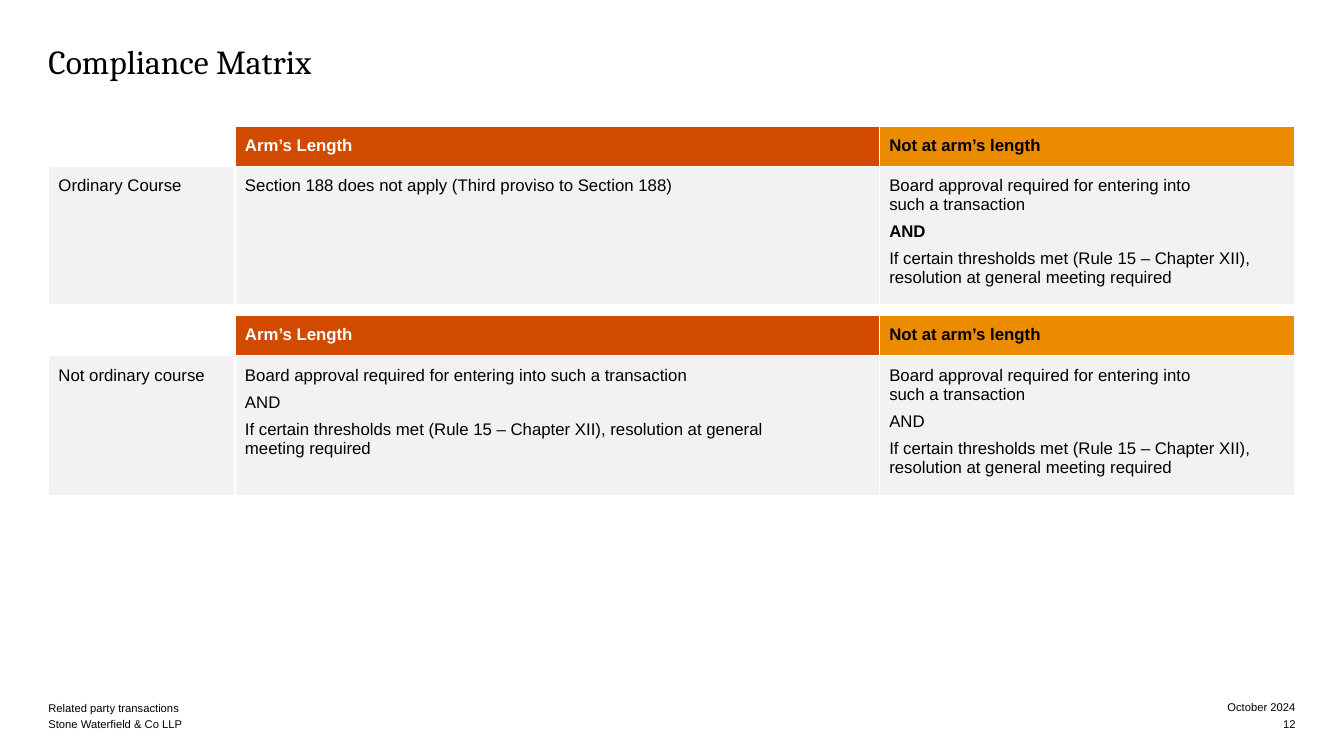
"""Builds a compliance matrix slide for related party transactions."""
from lxml.etree import SubElement
from pptx import Presentation
from pptx.dml.color import RGBColor as RGB
from pptx.enum.text import MSO_ANCHOR as ANCHOR, PP_ALIGN as ALIGN
from pptx.oxml.ns import qn
from pptx.util import Inches, Pt

COLORS = {"black": "000000", "white": "FFFFFF", "red": "D04A02",
          "amber": "EB8C00", "grey": "F2F2F2"}
LEFT, HEAD_H = 0.48, 0.4
COLS = (1.85, 6.39, 4.12)
HEADERS = ("", "Arm’s Length", "Not at arm’s length")
BOARD = "Board approval required for entering into "
RULE = "If certain thresholds met (Rule 15 – Chapter XII), resolution at general "
BOARD_SPLIT = BOARD + "\vsuch a transaction"
RULE_WRAP = RULE + "meeting required"


def write(tf, text, font="Arial", size=12, color="black", bold=False,
          bold_lines=(), align=ALIGN.LEFT, spacing=None, after=0):
    tf.word_wrap = True
    for i, line in enumerate(text.split("\n")):
        p = tf.paragraphs[0] if i == 0 else tf.add_paragraph()
        p.text = line
        p.alignment, p.line_spacing, p.space_after = align, spacing, Pt(after)
        for r in p.runs:
            r.font.name, r.font.size = font, Pt(size)
            r.font.bold = bold or line in bold_lines
            r.font.color.rgb = RGB.from_string(COLORS[color])


class Deck:
    def __init__(self):
        self.prs = Presentation()
        self.prs.slide_width, self.prs.slide_height = Inches(13.33), Inches(7.5)
        self.s = self.prs.slides.add_slide(self.prs.slide_layouts[6])

    def text(self, text, x, y, w, h, anchor=ANCHOR.TOP, **fmt):
        sp = self.s.shapes.add_textbox(Inches(x), Inches(y), Inches(w), Inches(h))
        tf = sp.text_frame
        tf.margin_left = tf.margin_right = tf.margin_top = tf.margin_bottom = 0
        tf.vertical_anchor = anchor
        write(tf, text, **fmt)

    def border(self, cell, side):
        ln = SubElement(cell._tc.get_or_add_tcPr(), qn(f"a:ln{side}"), w=str(Pt(1)))
        fill = SubElement(ln, qn("a:solidFill"))
        SubElement(fill, qn("a:srgbClr"), val=COLORS["white"])

    def cell(self, cell, text, fill, sides, **fmt):
        for side in sides:
            self.border(cell, side)
        if not text:
            cell.fill.background()
            return
        cell.fill.solid()
        cell.fill.fore_color.rgb = RGB.from_string(COLORS[fill])
        cell.margin_left = cell.margin_right = Inches(0.1)
        cell.margin_top = cell.margin_bottom = Inches(0.1)
        write(cell.text_frame, text, after=6, **fmt)

    def matrix(self, y, body_h, body, bold_lines=()):
        heights = (HEAD_H, body_h)
        table = self.s.shapes.add_table(
            2, len(COLS), Inches(LEFT), Inches(y),
            Inches(sum(COLS)), Inches(sum(heights))).table
        table.first_row = table.horz_banding = False
        for row, h in zip(table.rows, heights):
            row.height = Inches(h)
        for c, (w, head, text) in enumerate(zip(COLS, HEADERS, body)):
            table.columns[c].width = Inches(w)
            sides = ("L" if c > 0 else "") + ("R" if c < len(COLS) - 1 else "")
            self.cell(table.cell(0, c), head, "red" if c == 1 else "amber",
                      sides + "B", color="white" if c == 1 else "black", bold=True)
            self.cell(table.cell(1, c), text, "grey", sides + "T",
                      bold_lines=bold_lines)


def main():
    deck = Deck()
    deck.text("Compliance Matrix", LEFT, 0.47, 12.36, 0.69,
              font="Cambria", size=24, spacing=0.85)
    deck.matrix(1.25, 1.31, (
        "Ordinary Course",
        "Section 188 does not apply (Third proviso to Section 188)",
        f"{BOARD_SPLIT}\nAND\n{RULE_WRAP}"), bold_lines=("AND",))
    deck.matrix(3.13, 1.39, (
        "Not ordinary course",
        f"{BOARD}such a transaction\nAND\n{RULE}\vmeeting required",
        f"{BOARD_SPLIT}\nAND\n{RULE_WRAP}"))
    deck.text("Related party transactions", LEFT, 6.96, 5.98, 0.13,
              anchor=ANCHOR.MIDDLE, size=8)
    deck.text("Stone Waterfield & Co LLP", LEFT, 7.1, 5.98, 0.15,
              anchor=ANCHOR.BOTTOM, size=8)
    deck.text("October 2024", 10.92, 6.95, 1.93, 0.13, size=8, align=ALIGN.RIGHT)
    deck.text("12", 10.92, 7.1, 1.93, 0.15,
              anchor=ANCHOR.BOTTOM, size=8, align=ALIGN.RIGHT)
    deck.prs.save("out.pptx")


if __name__ == "__main__":
    main()
